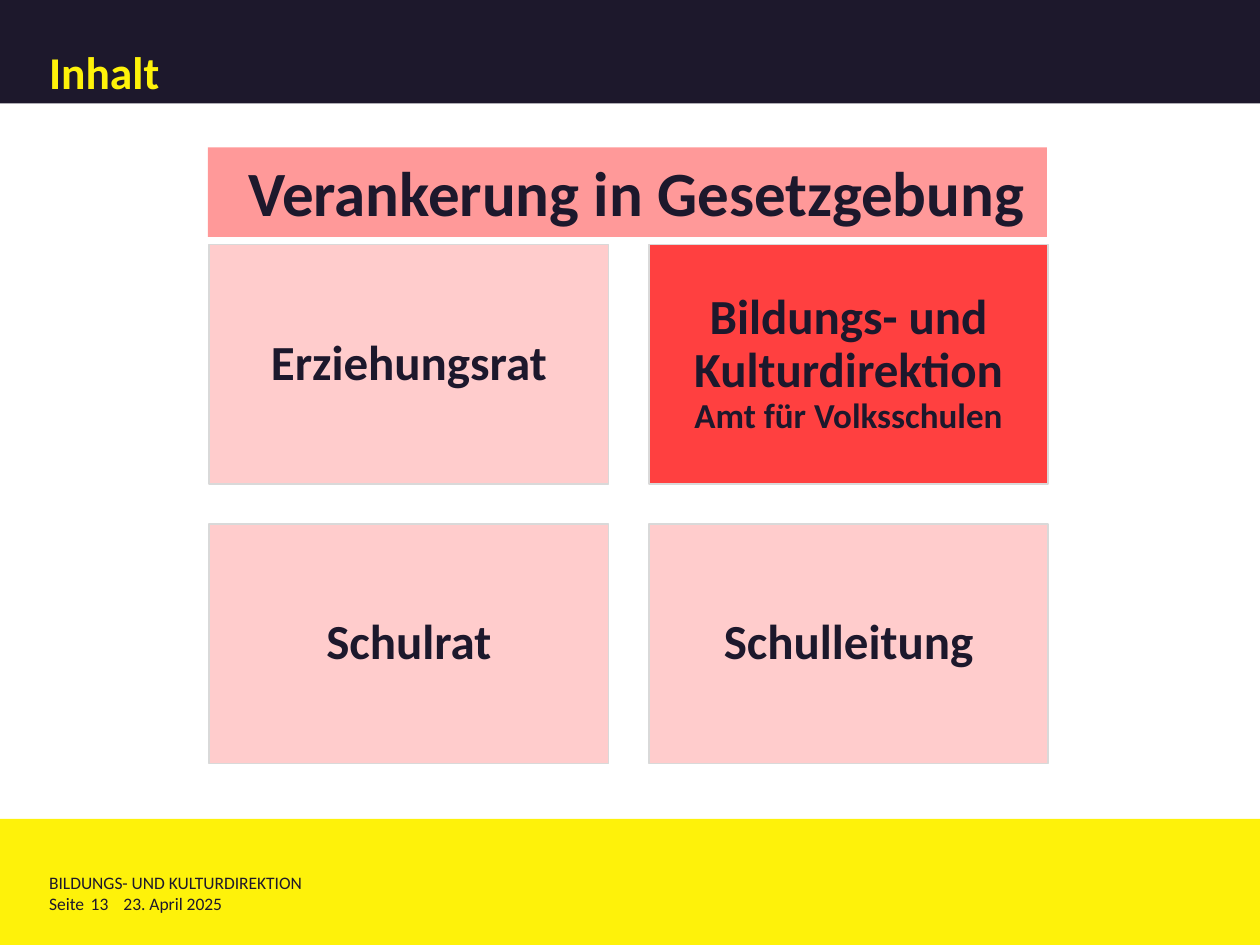
from dataclasses import dataclass

from pptx import Presentation
from pptx.dml.color import RGBColor
from pptx.enum.shapes import MSO_SHAPE
from pptx.enum.text import MSO_ANCHOR, PP_ALIGN
from pptx.util import Inches, Pt

RECT = MSO_SHAPE.RECTANGLE
LEFT, CENTER = PP_ALIGN.LEFT, PP_ALIGN.CENTER
TOP, MIDDLE, BOTTOM = MSO_ANCHOR.TOP, MSO_ANCHOR.MIDDLE, MSO_ANCHOR.BOTTOM


@dataclass(frozen=True)
class Theme:
    font: str = "Calibri"
    dark: str = "1D182C"
    yellow: str = "FEF20A"
    banner: str = "FF9999"
    card: str = "FFCCCC"
    highlight: str = "FF4040"
    border: str = "D9D9D9"
    title_size: int = 26
    banner_size: int = 36
    card_size: int = 28
    detail_size: int = 20
    footer_size: int = 10


THEME = Theme()


def add_box(slide, box, fill, border=None):
    """Add a flat rectangle, outlined only if a border colour is given."""
    panel = slide.shapes.add_shape(RECT, *map(Inches, box))
    panel.shadow.inherit = False
    panel.fill.solid()
    panel.fill.fore_color.rgb = RGBColor.from_string(fill)
    if border:
        panel.line.color.rgb = RGBColor.from_string(border)
        panel.line.width = Pt(1)
    else:
        panel.line.fill.background()
    return panel


def write(shape, *lines, color=THEME.dark, bold=True, align=LEFT, anchor=TOP,
          insets=(0, 0, 0, 0), spacing=1.0):
    """Fill a shape with (text, size) lines of a single paragraph."""
    frame = shape.text_frame
    frame.word_wrap = True
    frame.vertical_anchor = anchor
    (frame.margin_left, frame.margin_top,
     frame.margin_right, frame.margin_bottom) = map(Inches, insets)
    paragraph = frame.paragraphs[0]
    paragraph.alignment = align
    paragraph.line_spacing = spacing
    for index, (text, size) in enumerate(lines):
        if index:
            paragraph.add_line_break()
        run = paragraph.add_run()
        run.text = text
        run.font.name = THEME.font
        run.font.size = Pt(size)
        run.font.bold = bold
        run.font.color.rgb = RGBColor.from_string(color)


def add_footer(slide, box):
    left, top, _, _ = box
    add_box(slide, box, THEME.yellow)
    entries = [
        ("BILDUNGS- UND KULTURDIREKTION", 0.39, 0.42, 7.48),
        ("Seite", 0.39, 0.59, 0.35),
        ("23. April 2025", 0.98, 0.59, 2.28),
        ("13", 0.72, 0.59, 0.3),
    ]
    for text, dx, dy, width in entries:
        entry = slide.shapes.add_textbox(
            *map(Inches, (left + dx, top + dy, width, 0.17)))
        write(entry, (text, THEME.footer_size), bold=False)


def add_header(slide, box):
    write(add_box(slide, box, THEME.dark), ("Inhalt", THEME.title_size),
          color=THEME.yellow, anchor=BOTTOM, insets=(0.39, 0.08, 0.08, 0.04),
          spacing=0.8)


def add_banner(slide, box):
    write(add_box(slide, box, THEME.banner),
          ("Verankerung in Gesetzgebung", THEME.banner_size),
          insets=(0.32, 0.05, 0.05, 0.05))


def add_authorities(slide, box, gap=0.32):
    """Place the four authorities on a two by two grid."""
    left, top, width, height = box
    card_width, card_height = (width - gap) / 2, (height - gap) / 2
    size = THEME.card_size
    authorities = [
        (THEME.card, [("Erziehungsrat", size)]),
        (THEME.highlight, [("Bildungs- und Kulturdirektion", size),
                           ("Amt für Volksschulen", THEME.detail_size)]),
        (THEME.card, [("Schulrat", size)]),
        (THEME.card, [("Schulleitung", size)]),
    ]
    for index, (fill, lines) in enumerate(authorities):
        row, column = divmod(index, 2)
        card = add_box(slide, (left + column * (card_width + gap),
                               top + row * (card_height + gap),
                               card_width, card_height), fill, THEME.border)
        write(card, *lines, align=CENTER, anchor=MIDDLE, insets=(0.12,) * 4,
              spacing=0.9)


def main():
    deck = Presentation()
    deck.slide_width, deck.slide_height = Inches(10), Inches(7.5)
    slide = deck.slides.add_slide(deck.slide_layouts[6])
    add_footer(slide, (0, 6.5, 10, 1))
    add_header(slide, (0, 0, 10, 0.82))
    add_authorities(slide, (1.66, 1.94, 6.66, 4.12))
    add_banner(slide, (1.65, 1.17, 6.66, 0.71))
    deck.save("out.pptx")


if __name__ == "__main__":
    main()
